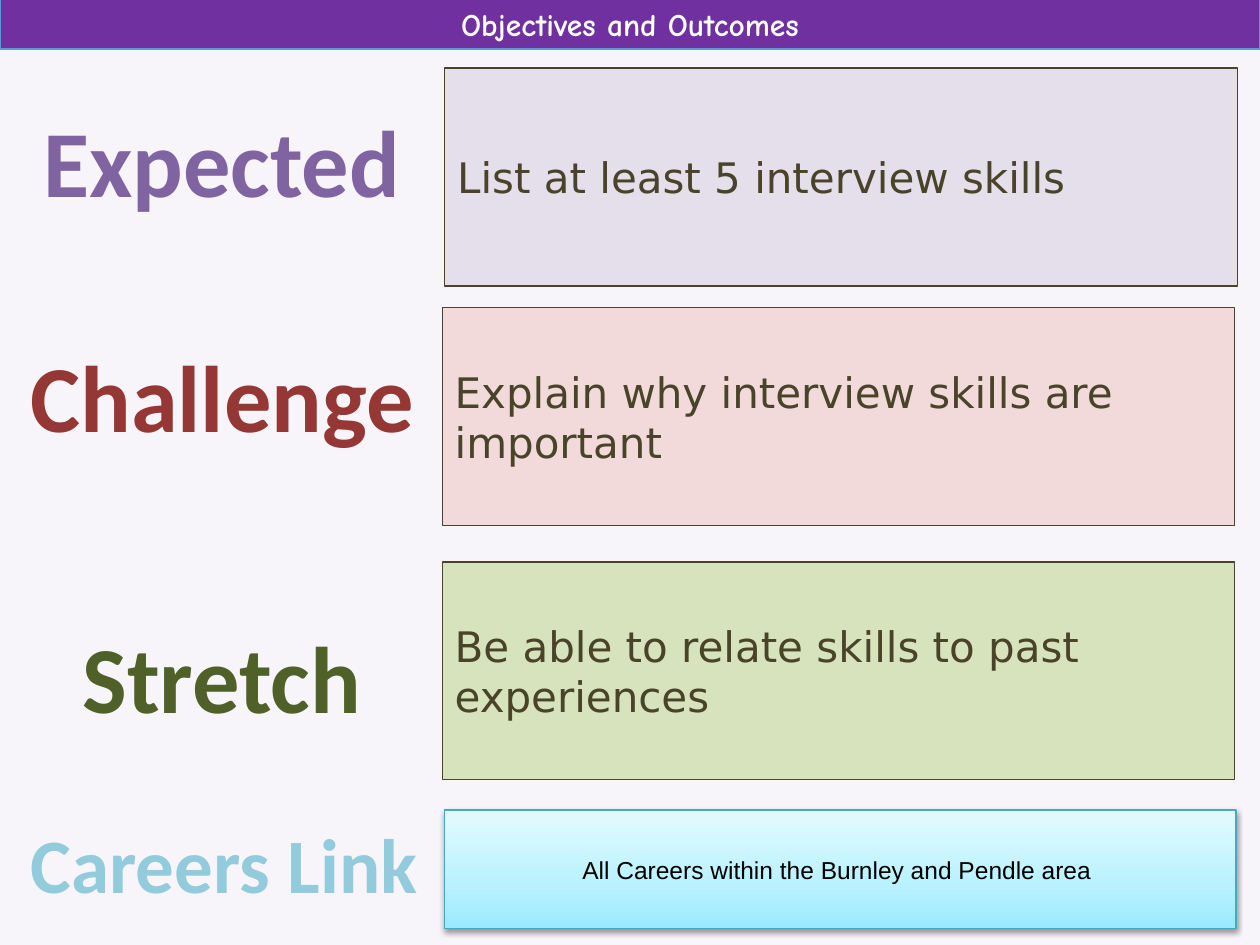
import copy
from dataclasses import dataclass

import pptx
import pptx.dml.color
import pptx.enum.shapes
import pptx.enum.text
import pptx.oxml
import pptx.oxml.ns
import pptx.util

ALIGN = pptx.enum.text.PP_ALIGN
ANCHOR = pptx.enum.text.MSO_ANCHOR
COLUMNS, ROWS = 100, 75
SLIDE_WIDTH, SLIDE_HEIGHT = pptx.util.Inches(10), pptx.util.Inches(7.5)
BOX_WIDTH, BOX_HEIGHT = 62.9, 17.3

COLOURS = {
    "page": "F8F5FA",
    "banner": "7030A0",
    "banner line": "5B9BD5",
    "white": "FFFFFF",
    "black": "000000",
    "ink": "494429",
    "careers line": "45A9C4",
}
CAREERS_STOPS = [(0, "9BE9FF"), (0.35, "B8F1FF"), (1, "E2FBFF")]


@dataclass(frozen=True)
class Area:
    """A rectangle in grid columns and rows."""
    left: float
    top: float
    width: float
    height: float

    def lengths(self) -> tuple[int, int, int, int]:
        across, down = SLIDE_WIDTH / COLUMNS, SLIDE_HEIGHT / ROWS
        return (round(self.left * across), round(self.top * down),
                round(self.width * across), round(self.height * down))


@dataclass(frozen=True)
class Label:
    text: str
    area: Area
    colour: str
    size: int = 54


@dataclass(frozen=True)
class Objective:
    text: str
    left: float
    top: float
    fill: str


LABELS = [
    Label("Expected", Area(2.3, 7.7, 30.6, 10.1), "8064A2"),
    Label("Challenge", Area(1.3, 26.3, 32.7, 10.1), "953734"),
    Label("Stretch", Area(5.4, 48.6, 24.4, 10.1), "4F6128"),
    Label("Careers Link", Area(1.3, 64.3, 33, 8.4), "92CCDC", size=44),
]
OBJECTIVES = [
    Objective("List at least 5 interview skills", 35.3, 5.4, "E5DFEC"),
    Objective("Explain why interview skills are important", 35.1, 24.4, "F2DADA"),
    Objective("Be able to relate skills to past experiences", 35.1, 44.6, "D6E3BC"),
]


def rgb(colour: str) -> pptx.dml.color.RGBColor:
    return pptx.dml.color.RGBColor.from_string(COLOURS.get(colour, colour))


def write(shape, text: str, *, font: str, size: int, colour: str, bold=False,
          align=ALIGN.CENTER, anchor=ANCHOR.TOP, wrap=True) -> None:
    frame = shape.text_frame
    frame.auto_size = pptx.enum.text.MSO_AUTO_SIZE.NONE
    frame.word_wrap = wrap
    frame.vertical_anchor = anchor
    para = frame.paragraphs[0]
    para.alignment = align
    span = para.add_run()
    span.text = text
    span.font.name = font
    span.font.size = pptx.util.Pt(size)
    span.font.bold = bold
    span.font.color.rgb = rgb(colour)


def paint(shape, fill: str, line: str, weight: float) -> None:
    shape.fill.solid()
    shape.fill.fore_color.rgb = rgb(fill)
    shape.line.color.rgb = rgb(line)
    shape.line.width = pptx.util.Pt(weight)


def add_box(page, area: Area, fill: str, line: str):
    box = page.shapes.add_shape(
        pptx.enum.shapes.MSO_SHAPE.RECTANGLE, *area.lengths())
    box.shadow.inherit = False
    paint(box, fill, line, 0.75)
    return box


def shade(box, stops: list[tuple[float, str]]) -> None:
    """Fill with a gradient that runs from bottom to top."""
    box.fill.gradient()
    box.fill.gradient_angle = 90
    stop_list = box.element.spPr.find(".//" + pptx.oxml.ns.qn("a:gsLst"))
    while len(stop_list) < len(stops):
        stop_list.append(copy.deepcopy(stop_list[0]))
    for stop, (position, colour) in zip(box.fill.gradient_stops, stops):
        stop.position = position
        stop.color.rgb = rgb(colour)


def drop_shadow(box) -> None:
    effects = box.element.spPr.find(pptx.oxml.ns.qn("a:effectLst"))
    blur, distance = pptx.util.Pt(3.1), pptx.util.Pt(1.6)
    effects.append(pptx.oxml.parse_xml(
        f'<a:outerShdw {pptx.oxml.ns.nsdecls("a")} blurRad="{blur}" '
        f'dist="{distance}" dir="5400000" rotWithShape="0">'
        f'<a:srgbClr val="{COLOURS["black"]}"><a:alpha val="38000"/></a:srgbClr>'
        '</a:outerShdw>'))


def add_banner(page) -> None:
    banner = page.shapes.title
    banner.left, banner.top, banner.width, banner.height = Area(
        0, -0.1, COLUMNS, 4).lengths()
    paint(banner, "banner", "banner line", 1)
    write(banner, "Objectives and Outcomes", font="Comic Neue", size=18,
          colour="white", bold=True)


def add_label(page, label: Label) -> None:
    box = page.shapes.add_textbox(*label.area.lengths())
    write(box, label.text, font="Calibri", size=label.size,
          colour=label.colour, bold=True, wrap=False)


def add_objective(page, objective: Objective) -> None:
    area = Area(objective.left, objective.top, BOX_WIDTH, BOX_HEIGHT)
    box = add_box(page, area, objective.fill, "ink")
    write(box, objective.text, font="DejaVu Sans", size=24, colour="ink",
          align=ALIGN.LEFT, anchor=ANCHOR.MIDDLE)


def add_careers(page) -> None:
    box = add_box(page, Area(35.3, 64.3, 62.8, 9.4), "white", "careers line")
    shade(box, CAREERS_STOPS)
    drop_shadow(box)
    write(box, "All Careers within the Burnley and Pendle area ", font="Arial",
          size=14, colour="black", anchor=ANCHOR.MIDDLE)


def main() -> None:
    deck = pptx.Presentation()
    deck.slide_width, deck.slide_height = SLIDE_WIDTH, SLIDE_HEIGHT
    page = deck.slides.add_slide(deck.slide_layouts.get_by_name("Title Only"))
    page.background.fill.solid()
    page.background.fill.fore_color.rgb = rgb("page")
    add_banner(page)
    for label in LABELS:
        add_label(page, label)
    for objective in OBJECTIVES:
        add_objective(page, objective)
    add_careers(page)
    deck.save("out.pptx")


if __name__ == "__main__":
    main()
